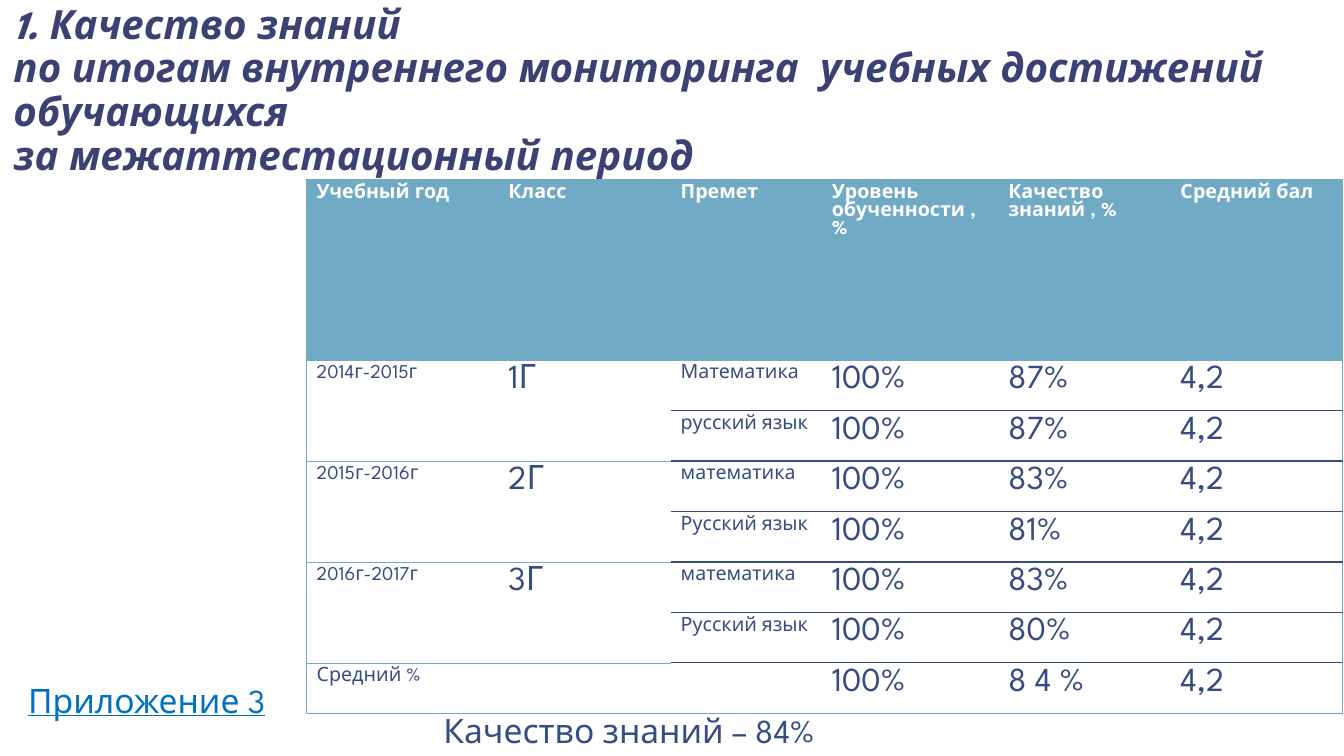
from copy import deepcopy

from lxml.etree import SubElement
from pptx import Presentation
from pptx.dml.color import RGBColor
from pptx.enum.text import MSO_ANCHOR as Anchor, MSO_AUTO_SIZE as AutoSize
from pptx.oxml.ns import qn
from pptx.util import Pt

FONT = "League Spartan"
NAVY, TEAL, WHITE = "374C81", "70AAC4", "FFFFFF"
NO_STYLE = "{2D5ABB26-0587-4C30-8999-92F81FD0307C}"

HEADINGS = ["Учебный год", "Класс", "Премет", "Уровень обученности , %",
            "Качество знаний , %", "Средний бал"]
RESULTS = [
    ["2014г-2015г", "1Г", "Математика", "100%", "87%", "4,2"],
    ["", "", "русский язык", "100%", "87%", "4,2"],
    ["2015г-2016г", "2Г", "математика", "100%", "83%", "4,2"],
    ["", "", "Русский язык", "100%", "81%", "4,2"],
    ["2016г-2017г", "3Г", "математика", "100%", "83%", "4,2"],
    ["", "", "Русский язык", "100%", "80%", "4,2"],
    ["Средний %", "", "", "100%", "8 4 %", "4,2"],
]
COLUMN_WIDTHS = [137, 123, 108, 126, 123, 123]
HEADER_HEIGHT, RESULT_HEIGHT = 129, 36
YEAR_ROWS = (1, 3, 5)


def rgb(value):
    return RGBColor.from_string(value)


def write(frame, text, size=24, color=NAVY, bold=False, italic=False,
          underline=False, spacing=None):
    paragraph = frame.paragraphs[0]
    paragraph.text = text
    if spacing:
        paragraph.line_spacing = spacing
    for run in paragraph.runs:
        font = run.font
        font.name, font.size, font.color.rgb = FONT, Pt(size), rgb(color)
        font.bold, font.italic, font.underline = bold, italic, underline
    for line_break in paragraph._p.findall(qn("a:br")):
        line_break.append(deepcopy(paragraph.runs[0]._r.rPr))


def add_title(slide, left, top, width, height):
    title = slide.shapes.title
    title.left, title.top, title.width, title.height = map(
        Pt, (left, top, width, height))
    frame = title.text_frame
    frame.word_wrap, frame.auto_size = True, AutoSize.NONE
    frame.vertical_anchor = Anchor.BOTTOM
    frame.margin_left = frame.margin_right = Pt(9.6)
    frame.margin_top = frame.margin_bottom = Pt(4.8)
    write(frame, "1. Качество знаний\v"
          "по итогам внутреннего мониторинга  учебных достижений обучающихся\v"
          "за межаттестационный период",
          size=28.8, color="3B4172", bold=True, italic=True, spacing=0.9)
    title.text_frame.paragraphs[0].alignment = 1


def add_caption(slide, text, left, top, width, height, wrap=True, **style):
    caption = slide.shapes.add_textbox(Pt(left), Pt(top), Pt(width), Pt(height))
    caption.text_frame.word_wrap = wrap
    caption.text_frame.auto_size = AutoSize.SHAPE_TO_FIT_TEXT
    write(caption.text_frame, text, spacing=0.95, **style)


def set_borders(cell, **borders):
    properties = cell._tc.get_or_add_tcPr()
    for position, side in enumerate("LRTB"):
        line = SubElement(properties, qn(f"a:ln{side}"))
        properties.insert(position, line)
        color, width = borders.get(side, (None, 0))
        line.set("w", str(Pt(width)))
        if color:
            fill = SubElement(line, qn("a:solidFill"))
            SubElement(fill, qn("a:srgbClr")).set("val", color)
        else:
            SubElement(line, qn("a:noFill"))


def cell_borders(row, column):
    thin, strong = (TEAL, 0.5), (NAVY, 1)
    last_row, last_column = len(RESULTS), len(HEADINGS) - 1

    def edge_above(edge):
        if edge <= 1 or edge > last_row:
            return thin
        if column > 1:
            return strong
        return thin if edge - 1 not in YEAR_ROWS else (None, 0)

    borders = {"T": edge_above(row), "B": edge_above(row + 1)}
    if column < 2 and row in YEAR_ROWS:
        borders["B"] = thin
    if column == 0:
        borders["L"] = thin
    if column == last_column:
        borders["R"] = thin
    return borders


def add_results(slide, left, top):
    rows = [HEADINGS] + RESULTS
    heights = [HEADER_HEIGHT] + [RESULT_HEIGHT] * len(RESULTS)
    frame = slide.shapes.add_table(
        len(rows), len(HEADINGS), Pt(left), Pt(top),
        Pt(sum(COLUMN_WIDTHS)), Pt(sum(heights)))
    table = frame.table
    table.first_row = table.horz_banding = False
    table._tbl.tblPr.find(qn("a:tableStyleId")).text = NO_STYLE
    for column, width in zip(table.columns, COLUMN_WIDTHS):
        column.width = Pt(width)
    for row, height in zip(table.rows, heights):
        row.height = Pt(height)
    for r, values in enumerate(rows):
        for c, value in enumerate(values):
            cell = table.cell(r, c)
            if r == 0:
                cell.fill.solid()
                cell.fill.fore_color.rgb = rgb(TEAL)
                write(cell.text_frame, value, size=14, color=WHITE, bold=True)
            else:
                cell.fill.background()
                if value:
                    write(cell.text_frame, value, size=14 if c in (0, 2) else 24)
            set_borders(cell, **cell_borders(r, c))
    for r in YEAR_ROWS:
        for c in range(2):
            table.cell(r, c).merge(table.cell(r + 1, c))


def main():
    deck = Presentation()
    deck.slide_width, deck.slide_height = Pt(960), Pt(540)
    slide = deck.slides.add_slide(deck.slide_layouts[5])
    add_title(slide, 0, 21, 960, 111.5)
    add_caption(slide, "Качество знаний – 84%", 309.6, 505.5, 420, 34.5)
    add_results(slide, 219, 128.3)
    add_caption(slide, "Приложение 3", 13, 484, 191.5, 34.5, wrap=False,
                color="0070C0", underline=True)
    deck.save("out.pptx")


if __name__ == "__main__":
    main()
